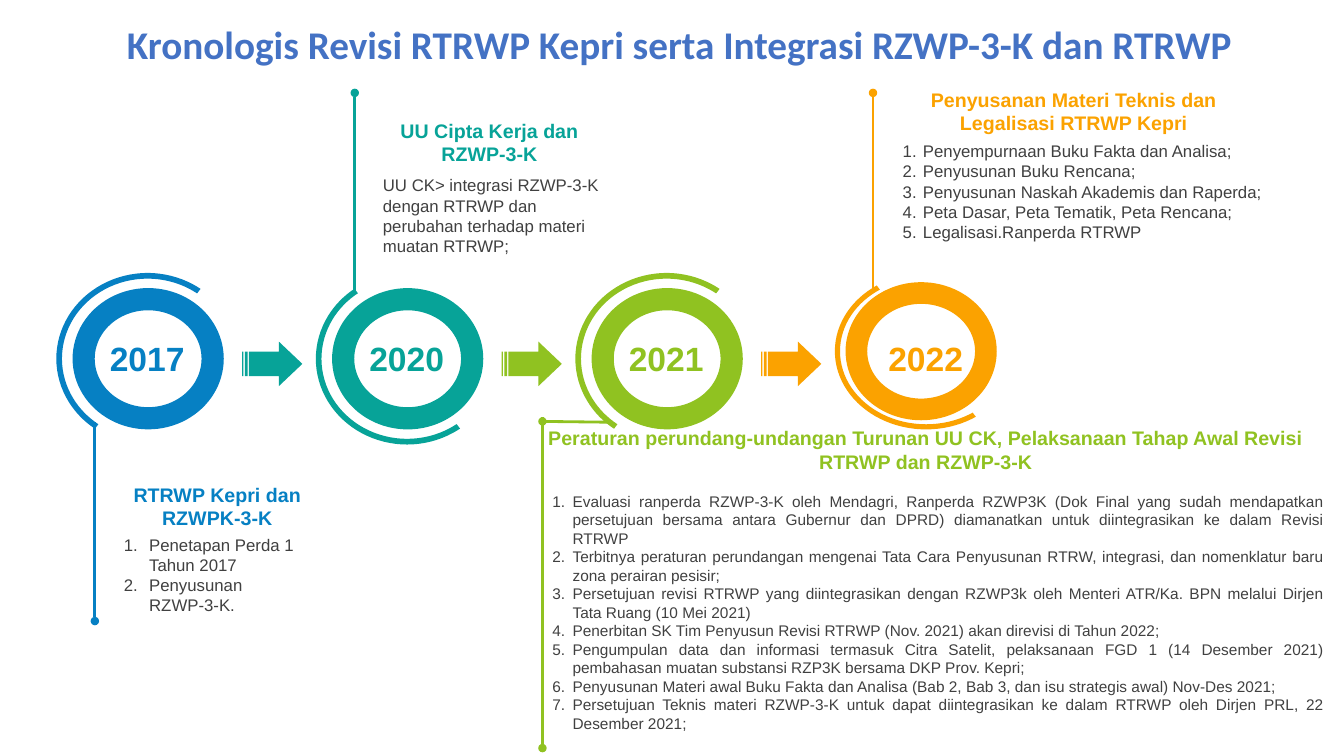
"""Build the timeline slide of the RTRWP Kepri revision, 2017 to 2022."""
from lxml.etree import SubElement
from pptx import Presentation
from pptx.dml.color import RGBColor
from pptx.enum.shapes import MSO_CONNECTOR, MSO_SHAPE
from pptx.enum.text import MSO_AUTO_SIZE, PP_ALIGN
from pptx.oxml.ns import qn
from pptx.util import Cm, Pt

BLUE, TEAL, GREEN, GOLD = "0680C3", "07A398", "90C221", "FBA200"
GRAY, TITLE = "404040", "4472C4"
PITCH = 6.54
LEFT, MID, JUST = PP_ALIGN.LEFT, PP_ALIGN.CENTER, PP_ALIGN.JUSTIFY


def paint(part, color):
    """Give a fill or a line one solid hex colour."""
    part.solid()
    part.fore_color.rgb = RGBColor.from_string(color)


def write(place, lines, size, color, bold=False, align=LEFT, hang=0, face="Arial"):
    """Add a text box; a hanging indent makes a numbered list."""
    box = slide.shapes.add_textbox(*map(Cm, place))
    frame = box.text_frame
    frame.word_wrap = True
    frame.auto_size = MSO_AUTO_SIZE.SHAPE_TO_FIT_TEXT
    style = {"name": face, "size": Pt(size), "bold": bold}
    for i, line in enumerate(lines):
        para = frame.add_paragraph() if i else frame.paragraphs[0]
        para.alignment = align
        if hang:
            props = para._p.get_or_add_pPr()
            props.set("marL", str(Cm(hang)))
            props.set("indent", str(-Cm(hang)))
            SubElement(props, qn("a:buFont"), typeface="+mj-lt")
            SubElement(props, qn("a:buAutoNum"), type="arabicPeriod")
        run = para.add_run()
        run.text = line
        for name, value in style.items():
            setattr(run.font, name, value)
        paint(run.font.fill, color)


deck = Presentation()
deck.slide_width, deck.slide_height = Cm(33.87), Cm(19.05)
slide = deck.slides.add_slide(deck.slide_layouts[6])

write((2.95, 0.38, 30, 1.45),
      ["Kronologis Revisi RTRWP Kepri serta Integrasi RZWP-3-K dan RTRWP"],
      28, TITLE, bold=True, face="Calibri")

DONUT, ARC = (1.83, 7.26, 3.81, 3.56), (1.42, 6.88, 4.6, 4.32)
rings = [
    ("2017", BLUE, False, DONUT, ARC),
    ("2020", TEAL, True, DONUT, ARC),
    ("2021", GREEN, False, DONUT, ARC),
    ("2022", GOLD, True, (1.69, 7.11, 3.81, 3.48), (1.42, 6.88, 4.6, 3.94)),
]
for i, (year, color, turned, donut, arc) in enumerate(rings):
    shift = i * PITCH
    parts = [
        (MSO_SHAPE.DONUT, donut, [0.157], turned),
        (MSO_SHAPE.BLOCK_ARC, arc, [76.13, 184.318, 0.033], turned),
    ]
    if i:
        arrow = (6.1 - PITCH, 8.61, 1.52, 1.12)
        parts.append((MSO_SHAPE.STRIPED_RIGHT_ARROW, arrow, [0.551, 0.527], False))
    for kind, (x, y, w, h), values, flip in parts:
        shape = slide.shapes.add_shape(kind, Cm(x + shift), Cm(y), Cm(w), Cm(h))
        for n, value in enumerate(values):
            shape.adjustments[n] = value
        if flip:
            shape.rotation = 180
            shape._element.spPr.xfrm.set("flipH", "1")
        shape.shadow.inherit = False
        paint(shape.fill, color)
        shape.line.fill.background()
    write((1.93 + shift, 8.38, 3.56, 1.27), [year], 24, color, bold=True, align=MID)

stems = [
    (BLUE, 2.39, 15.65, 2.39, 10.64),
    (TEAL, 8.94, 2.34, 8.94, 7.34),
    (GREEN, 13.67, 10.62, 15.44, 10.64),
    (GREEN, 13.67, 18.85, 13.67, 10.52),
    (GOLD, 22, 2.34, 22, 7.34),
]
for color, *ends in stems:
    stem = slide.shapes.add_connector(MSO_CONNECTOR.STRAIGHT, *map(Cm, ends))
    stem.line.width = Pt(2)
    paint(stem.line.fill, color)
    SubElement(stem.line._get_or_add_ln(), qn("a:headEnd"), type="oval")
    SubElement(stem._element.spPr, qn("a:effectLst"))

heads = [
    ((2.87, 12.04, 5.21, 1.45), BLUE, "RTRWP Kepri dan RZWPK-3-K"),
    ((9.4, 2.87, 5.87, 1.45), TEAL, "UU Cipta Kerja dan RZWP-3-K"),
    ((13.46, 10.62, 19.74, 1.45), GREEN,
     "Peraturan perundang-undangan Turunan UU CK, "
     "Pelaksanaan Tahap Awal Revisi RTRWP dan RZWP-3-K"),
    ((22.45, 2.08, 9.22, 1.45), GOLD,
     "Penyusanan Materi Teknis dan Legalisasi RTRWP Kepri"),
]
for place, color, text in heads:
    write(place, [text], 14, color, bold=True, align=MID)

notes = [
    ((2.87, 13.34, 5.21, 2.31), 12, LEFT, 0.64, [
        "Penetapan Perda 1 Tahun 2017",
        "Penyusunan RZWP-3-K.",
    ]),
    ((9.4, 4.29, 6.4, 2.82), 12, LEFT, 0, [
        "UU CK> integrasi RZWP-3-K dengan RTRWP dan "
        "perubahan terhadap materi muatan RTRWP;",
    ]),
    ((13.67, 12.27, 19.96, 5.89), 11, JUST, 0.51, [
        "Evaluasi ranperda RZWP-3-K oleh Mendagri, Ranperda RZWP3K (Dok Final "
        "yang sudah mendapatkan persetujuan bersama antara Gubernur dan DPRD) "
        "diamanatkan untuk diintegrasikan ke dalam Revisi RTRWP",
        "Terbitnya peraturan perundangan mengenai Tata Cara Penyusunan RTRW, "
        "integrasi, dan nomenklatur baru zona perairan pesisir;",
        "Persetujuan revisi RTRWP yang diintegrasikan dengan RZWP3k oleh Menteri "
        "ATR/Ka. BPN melalui Dirjen Tata Ruang (10 Mei 2021)",
        "Penerbitan SK Tim Penyusun Revisi RTRWP (Nov. 2021) akan direvisi di "
        "Tahun 2022;",
        "Pengumpulan data dan informasi termasuk Citra Satelit, pelaksanaan FGD 1 "
        "(14 Desember 2021) pembahasan muatan substansi RZP3K bersama DKP Prov. "
        "Kepri;",
        "Penyusunan Materi awal Buku Fakta dan Analisa (Bab 2, Bab 3, dan isu "
        "strategis awal) Nov-Des 2021;",
        "Persetujuan Teknis materi RZWP-3-K untuk dapat diintegrasikan ke dalam "
        "RTRWP oleh Dirjen PRL, 22 Desember 2021;",
    ]),
    ((22.5, 3.43, 9.6, 3.33), 12, LEFT, 0.51, [
        "Penyempurnaan Buku Fakta dan Analisa;",
        "Penyusunan Buku Rencana;",
        "Penyusunan Naskah Akademis dan Raperda;",
        "Peta Dasar, Peta Tematik, Peta Rencana;",
        "Legalisasi.Ranperda RTRWP",
    ]),
]
for place, size, align, hang, lines in notes:
    write(place, lines, size, GRAY, align=align, hang=hang)

deck.save("out.pptx")
